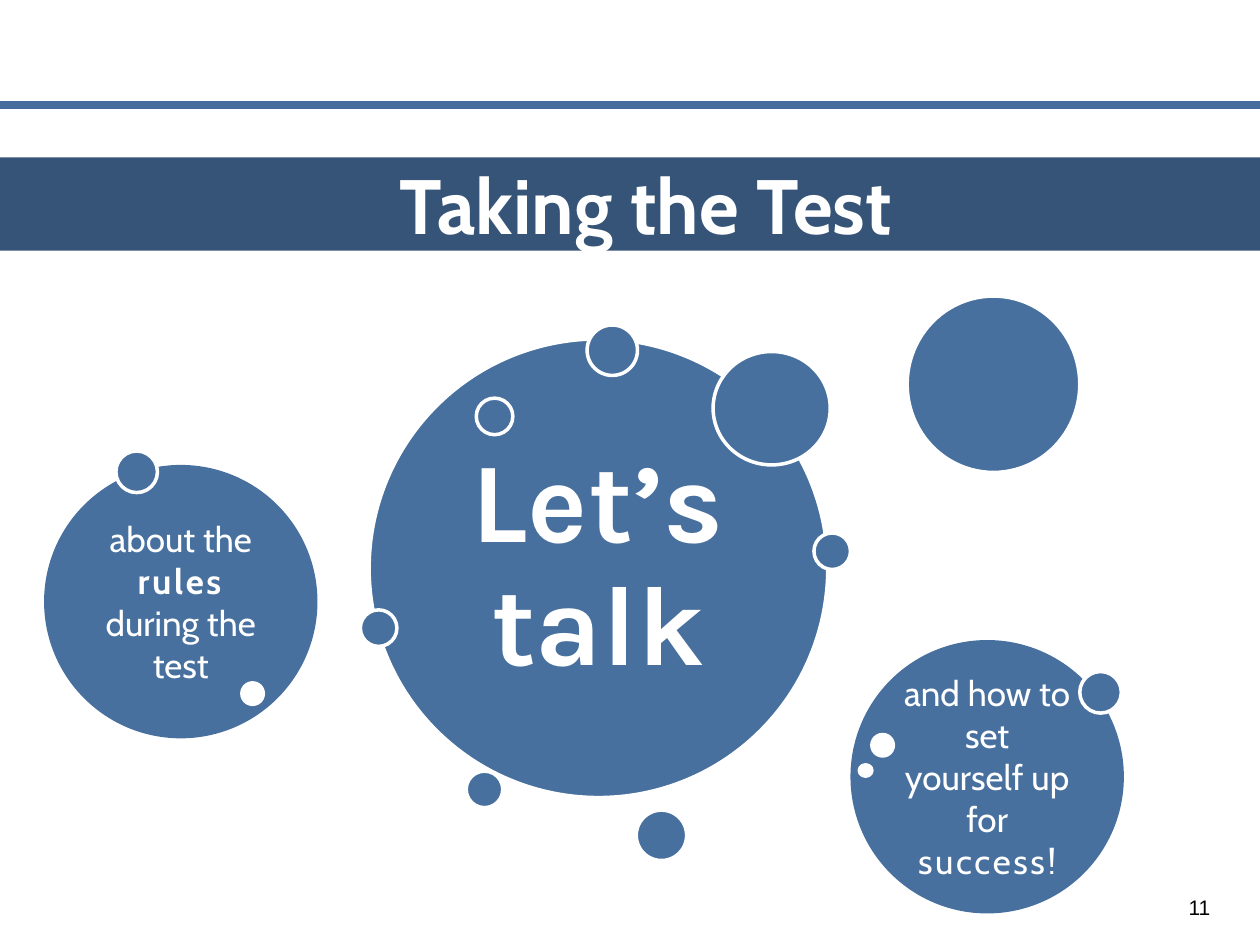
from pptx import Presentation
from pptx.dml.color import RGBColor
from pptx.enum import shapes, text
from pptx.oxml.ns import qn
from pptx.util import Inches, Pt
from lxml import etree

THEME = {
    "rule": RGBColor.from_string("446D9E"),
    "bubble": RGBColor.from_string("48709F"),
    "band": RGBColor.from_string("365477"),
    "white": RGBColor.from_string("FFFFFF"),
    "black": RGBColor.from_string("000000"),
    "headline": Pt(65),
    "title": Pt(44),
    "body": Pt(20),
    "number": Pt(12),
    "outline": Pt(2),
    "rule_width": Pt(4.5),
}
OVAL = shapes.MSO_SHAPE.OVAL
CIRCLE = shapes.MSO_SHAPE.FLOWCHART_CONNECTOR
MIDDLE = text.MSO_ANCHOR.MIDDLE


def add_shape(parent, kind, box, fill="bubble", outline=True):
    shape = parent.shapes.add_shape(kind, *map(Inches, box))
    shape.shadow.inherit = False
    shape.fill.solid()
    shape.fill.fore_color.rgb = THEME[fill]
    if outline:
        shape.line.color.rgb = THEME["white"]
        shape.line.width = THEME["outline"]
    else:
        shape.line.fill.background()
    return shape


def write(shape, runs, size, font="Cabin", color="white", inset=None, anchor=MIDDLE):
    frame = shape.text_frame
    frame.word_wrap = True
    frame.vertical_anchor = anchor
    if inset is not None:
        for side in ("left", "top", "right", "bottom"):
            setattr(frame, f"margin_{side}", Inches(inset))
    paragraph = frame.paragraphs[0]
    paragraph.alignment = text.PP_ALIGN.CENTER
    for words, bold, spacing in runs:
        run = paragraph.add_run()
        run.text = words
        formats = {"size": THEME[size], "name": font, "bold": bold}
        for name, value in formats.items():
            setattr(run.font, name, value)
        run.font.color.rgb = THEME[color]
        if spacing:
            run.font._element.set("spc", str(spacing))
    return paragraph


presentation = Presentation()
presentation.slide_width = Inches(10)
presentation.slide_height = Inches(7.5)
slide = presentation.slides.add_slide(presentation.slide_layouts[6])

rule = slide.shapes.add_connector(
    shapes.MSO_CONNECTOR.STRAIGHT, Inches(0), Inches(0.83), Inches(10), Inches(0.83))
rule.line.color.rgb = THEME["rule"]
rule.line.width = THEME["rule_width"]
etree.SubElement(rule._element.spPr, qn("a:effectLst"))

number = slide.shapes.add_textbox(Inches(9.29), Inches(7), Inches(0.46), Inches(0.4))
write(number, [("11", False, 0)], "number", "Arial", "black")

talk = slide.shapes.add_group_shape()
add_shape(talk, OVAL, (2.93, 2.69, 3.64, 3.64))
headline = talk.shapes.add_textbox(*map(Inches, (3.46, 3.22, 2.57, 2.57)))
paragraph = write(headline, [("Let’s talk", True, 0)], "headline", "Karla", inset=0.27)
paragraph.line_spacing = 0.9
for left, top, diameter in (
    (4.66, 2.58, 0.4), (3.7, 6.12, 0.29), (6.46, 4.23, 0.29),
    (5.05, 6.43, 0.4), (3.78, 3.16, 0.29), (2.86, 4.84, 0.29),
):
    add_shape(talk, OVAL, (left, top, diameter, diameter))

band = add_shape(slide, shapes.MSO_SHAPE.RECTANGLE, (0, 1.25, 10, 0.74), "band", False)
paragraph = write(band, [("Taking the Test", True, 0)], "title", inset=0,
                  anchor=text.MSO_ANCHOR.TOP)
for name, value in {"marL": Inches(0.25), "indent": 0}.items():
    paragraph._p.get_or_add_pPr().set(name, str(value))

topics = [
    ((0.35, 3.69),
     [("about the ", False, 0), ("rules ", True, 150), ("during the test", False, 0)],
     [((0.92, 3.58, 0.33, 0.33), "bubble"), ((1.92, 5.42, 0.17, 0.17), "white")]),
    ((6.75, 5.08),
     [("and how to set yourself up for ", False, 0), ("success", False, 150), ("!", False, 0)],
     [((8.57, 5.33, 0.33, 0.33), "bubble"), ((6.92, 5.83, 0.17, 0.17), "white"),
      ((6.82, 6.07, 0.1, 0.09), "white")]),
]
for corner, runs, dots in topics:
    topic = slide.shapes.add_group_shape()
    bubble = add_shape(topic, CIRCLE, (*corner, 2.17, 2.17), outline=False)
    write(bubble, runs, "body")
    for box, fill in dots:
        add_shape(topic, CIRCLE, box, fill)

for box in ((5.66, 2.79, 0.93, 0.9), (7.2, 2.35, 1.37, 1.4)):
    add_shape(slide, CIRCLE, box)

presentation.save("out.pptx")
